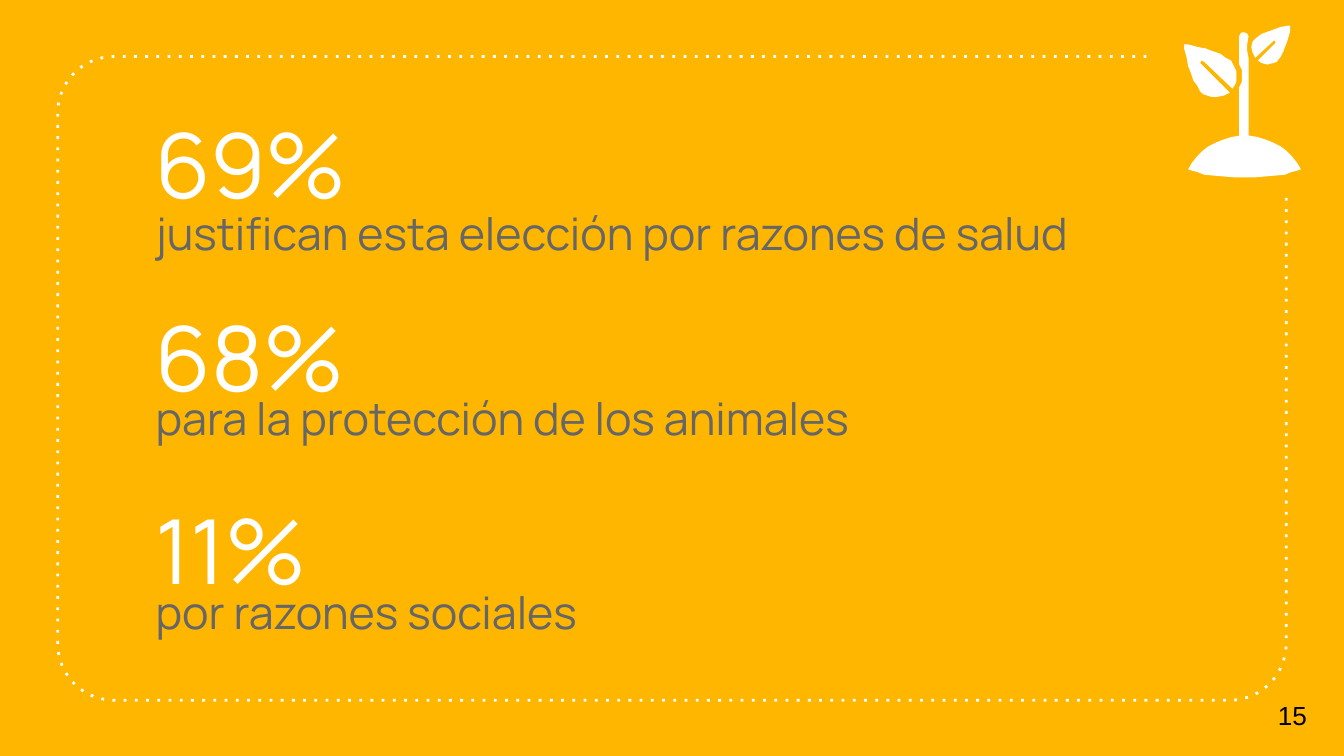
import math

import lxml.etree
import pptx
import pptx.dml.color
import pptx.enum.text
import pptx.oxml.ns
import pptx.util
from pptx.util import Inches

FONT = "Manrope"
WHITE = "FFFFFF"
GRAY = "666666"
YELLOW = "FFB600"

REASONS = [
    ("69%", 0.71, "justifican esta elección por razones de salud", 1.43),
    ("68%", 2.15, "para la protección de los animales", 2.81),
    ("11%", 3.58, "por razones sociales", 4.25),
]

SMALL_LEAF = [
    (9.59, 0.19), (9.53, 0.2), (9.45, 0.23), (9.39, 0.25), (9.35, 0.28),
    (9.32, 0.31), (9.31, 0.35), (9.32, 0.39), (9.34, 0.43), (9.47, 0.31),
    (9.48, 0.3), (9.49, 0.31), (9.49, 0.32), (9.36, 0.45), (9.39, 0.47),
    (9.43, 0.48), (9.47, 0.47), (9.5, 0.46), (9.53, 0.42), (9.55, 0.38),
    (9.58, 0.3), (9.6, 0.23), (9.6, 0.19),
]
LARGE_LEAF = [
    (8.81, 0.33), (8.81, 0.36), (8.83, 0.43), (8.84, 0.49), (8.86, 0.54),
    (8.88, 0.6), (8.91, 0.64), (8.93, 0.68), (8.95, 0.7), (8.98, 0.71),
    (9.01, 0.72), (9.06, 0.72), (9.11, 0.71), (9.15, 0.69), (8.94, 0.48),
    (8.93, 0.47), (8.94, 0.45), (8.96, 0.46), (9.17, 0.66), (9.19, 0.63),
    (9.2, 0.6), (9.2, 0.53), (9.18, 0.49), (9.16, 0.45), (9.12, 0.43),
    (9.08, 0.4), (9.02, 0.38), (8.97, 0.36), (8.91, 0.35), (8.84, 0.33),
]
STEM = [
    (9.29, 1.01), (9.29, 0.43), (9.28, 0.38), (9.28, 0.33), (9.29, 0.27),
    (9.28, 0.25), (9.26, 0.24), (9.24, 0.24), (9.23, 0.25), (9.22, 0.27),
    (9.22, 0.48), (9.24, 0.52), (9.24, 0.61), (9.22, 0.65),
]
HALF_MOUND = [
    (9.22, 1.01), (9.16, 1.02), (9.1, 1.04), (9.05, 1.06), (8.99, 1.09),
    (8.95, 1.12), (8.91, 1.16), (8.87, 1.21), (8.84, 1.26), (8.87, 1.27),
    (8.91, 1.28), (8.96, 1.3), (9.07, 1.31), (9.19, 1.32),
]
MOUND_CENTER = 9.26


def color(value):
    return pptx.dml.color.RGBColor.from_string(value)


def add_outline(shapes, points, closed):
    corners = [(Inches(x), Inches(y)) for x, y in points]
    builder = shapes.build_freeform(*corners[0])
    builder.add_line_segments(corners[1:], close=closed)
    shape = builder.convert_to_shape()
    shape.shadow.inherit = False
    return shape


def arc(center_x, center_y, radius, start):
    angles = [math.radians(start - 90 + 90 * step / 15) for step in range(16)]
    return [
        (center_x + radius * math.cos(angle), center_y - radius * math.sin(angle))
        for angle in angles
    ]


def add_frame(slide):
    radius = 0.42
    left, right, top, bottom = 0.85, 9.15, 0.84, 4.79
    points = [(8.53, top - radius)]
    points += arc(left, top, radius, 180)
    points += arc(left, bottom, radius, 270)
    points += arc(right, bottom, radius, 360)
    points.append((right + radius, 1.46))
    frame = add_outline(slide.shapes, points, False)
    frame.fill.background()
    frame.line.color.rgb = color(WHITE)
    frame.line.width = pptx.util.Pt(1.5)
    line = frame.element.spPr.find(pptx.oxml.ns.qn("a:ln"))
    dash = lxml.etree.SubElement(line, pptx.oxml.ns.qn("a:prstDash"))
    dash.set("val", "dot")


def add_plant(slide):
    plant = slide.shapes.add_group_shape()
    mirrored = [(2 * MOUND_CENTER - x, y) for x, y in reversed(HALF_MOUND)]
    for points in (SMALL_LEAF, STEM + HALF_MOUND + mirrored, LARGE_LEAF):
        part = add_outline(plant.shapes, points, True)
        part.fill.solid()
        part.fill.fore_color.rgb = color(WHITE)
        part.line.fill.background()


def add_text(slide, text, left, top, width, height, size, font, fill, anchor="TOP"):
    box = slide.shapes.add_textbox(
        Inches(left), Inches(top), Inches(width), Inches(height)
    )
    frame = box.text_frame
    frame.word_wrap = True
    frame.margin_left = frame.margin_right = Inches(0.1)
    frame.margin_top = frame.margin_bottom = Inches(0.1)
    frame.vertical_anchor = pptx.enum.text.MSO_ANCHOR[anchor]
    para = frame.paragraphs[0]
    para.text = text
    para.font.name = font
    para.font.size = pptx.util.Pt(size)
    para.font.color.rgb = color(fill)


def main():
    deck = pptx.Presentation()
    deck.slide_width = Inches(10)
    deck.slide_height = deck.slide_width * 9 // 16
    slide = deck.slides.add_slide(deck.slide_layouts[6])
    slide.background.fill.solid()
    slide.background.fill.fore_color.rgb = color(YELLOW)

    add_frame(slide)
    for share, share_top, reason, reason_top in REASONS:
        add_text(slide, share, 1.06, share_top, 7.87, 0.98, 48, FONT, WHITE)
        add_text(slide, reason, 1.06, reason_top, 7.87, 0.51, 24, FONT, GRAY)
    add_text(slide, "15", 9.41, 5.02, 0.59, 0.6, 14, "Arial", "000000", "MIDDLE")
    add_plant(slide)
    deck.save("out.pptx")


if __name__ == "__main__":
    main()
